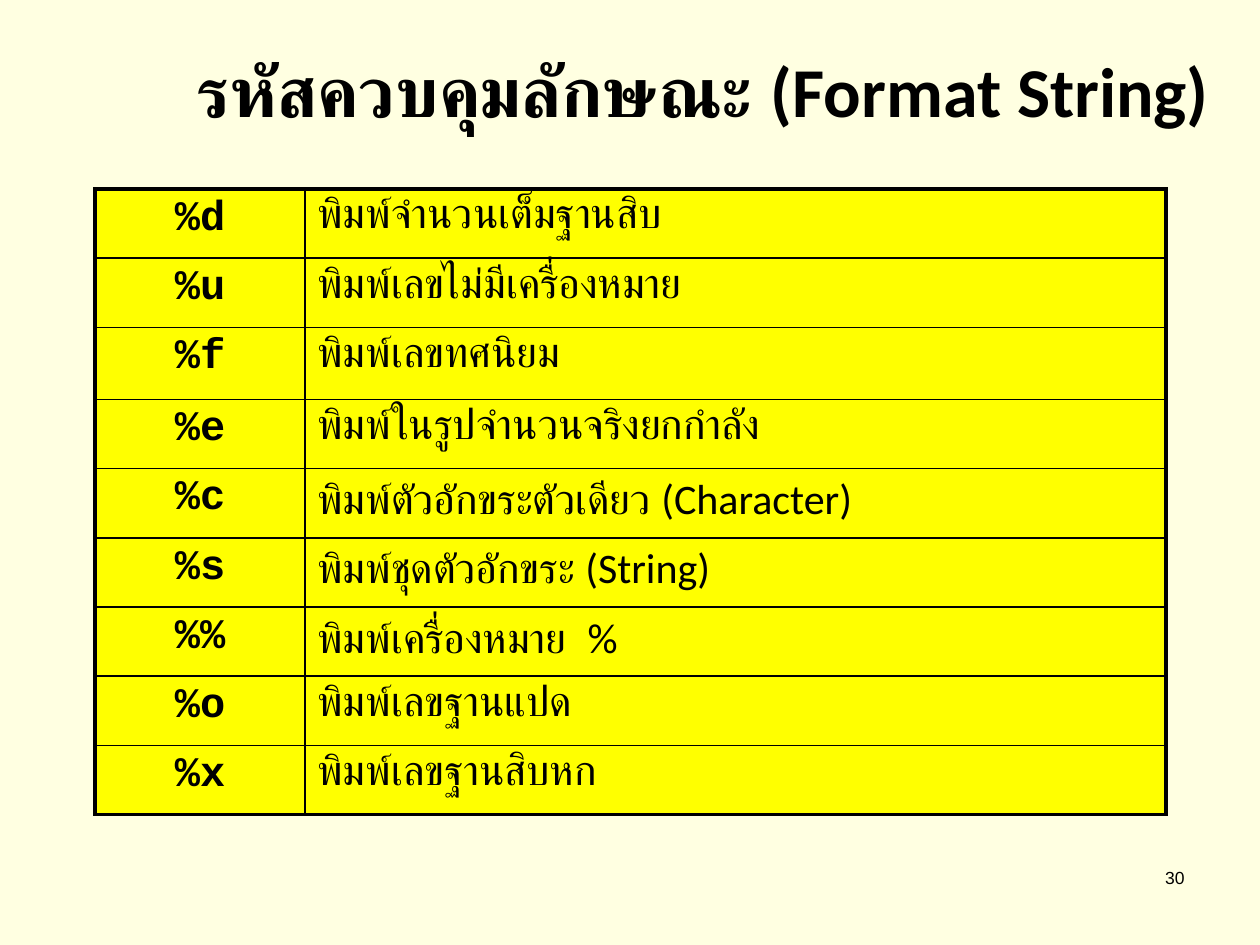
import pptx
import pptx.dml.color
import pptx.enum.text
import pptx.oxml
import pptx.oxml.ns
import pptx.util

PX = 914400 / 126
BLACK, CREAM, YELLOW = "000000", "FFFFE1", "FFFF00"
ALIGN = pptx.enum.text.PP_ALIGN
CODES = [
    ("%d", "พิมพ์จำนวนเต็มฐานสิบ"),
    ("%u", "พิมพ์เลขไม่มีเครื่องหมาย"),
    ("%f", "พิมพ์เลขทศนิยม"),
    ("%e", "พิมพ์ในรูปจำนวนจริงยกกำลัง"),
    ("%c", "พิมพ์ตัวอักขระตัวเดียว (Character)"),
    ("%s", "พิมพ์ชุดตัวอักขระ (String)"),
    ("%%", "พิมพ์เครื่องหมาย  %"),
    ("%o", "พิมพ์เลขฐานแปด"),
    ("%x", "พิมพ์เลขฐานสิบหก"),
]


def px(n):
    """Turn px into EMU."""
    return pptx.util.Emu(round(n * PX))


def color(value):
    """Turn a hex string into a colour."""
    return pptx.dml.color.RGBColor.from_string(value)


def write(tf, text, font, size, bold=False, align=ALIGN.LEFT):
    """Set the text of a frame and format its run."""
    tf.text = text
    p = tf.paragraphs[0]
    p.alignment = align
    r = p.runs[0]
    r.font.name, r.font.size, r.font.bold = font, pptx.util.Pt(size), bold
    r.font.color.rgb = color(BLACK)


def set_borders(cell, widths):
    """Draw the left, right, top and bottom lines of a cell."""
    tcPr = cell._tc.get_or_add_tcPr()
    for side, width in zip("LRTB", widths):
        tcPr.append(pptx.oxml.parse_xml(
            f'<a:ln{side} {pptx.oxml.ns.nsdecls("a")} w="{pptx.util.Pt(width)}">'
            f'<a:solidFill><a:srgbClr val="{BLACK}"/></a:solidFill></a:ln{side}>'))


def add_title(s, x, y, w, h):
    """Place the slide title."""
    sp = s.shapes.title
    sp.left, sp.top, sp.width, sp.height = map(px, (x, y, w, h))
    tf = sp.text_frame
    tf.vertical_anchor = pptx.enum.text.MSO_ANCHOR.MIDDLE
    write(tf, "รหัสควบคุมลักษณะ (Format String)", "Calibri", 40, True)


def add_codes(s, x, y, w, h):
    """Place the table of format codes."""
    code_w, tall_row, tall_h = 210, 2, 72
    last = len(CODES) - 1
    table = s.shapes.add_table(len(CODES), 2, *map(px, (x, y, w, h))).table
    table.columns[0].width, table.columns[1].width = px(code_w), px(w - code_w)
    for i, texts in enumerate(CODES):
        table.rows[i].height = px(tall_h if i == tall_row else (h - tall_h) / last)
        for j, text in enumerate(texts):
            cell = table.cell(i, j)
            outer = (j == 0, j == 1, i == 0, i == last)
            set_borders(cell, [2.25 if edge else 1 for edge in outer])
            cell.fill.solid()
            cell.fill.fore_color.rgb = color(YELLOW)
            if j == 0:
                write(cell.text_frame, text, "Courier New", 24, True, ALIGN.CENTER)
            else:
                write(cell.text_frame, text, "Calibri", 24)


def add_number(s, x, y, w, h):
    """Place the slide number."""
    tf = s.shapes.add_textbox(*map(px, (x, y, w, h))).text_frame
    tf.word_wrap = True
    write(tf, "30", "Arial", 10, align=ALIGN.RIGHT)


def main():
    """Build the slide and save it."""
    prs = pptx.Presentation()
    prs.slide_width, prs.slide_height = px(1260), px(945)
    s = prs.slides.add_slide(prs.slide_layouts[5])
    s.background.fill.solid()
    s.background.fill.fore_color.rgb = color(CREAM)
    add_number(s, 935, 861, 262, 63)
    add_title(s, 184, 10, 1071, 158)
    add_codes(s, 95, 189, 1071, 626)
    prs.save("out.pptx")


if __name__ == "__main__":
    main()
